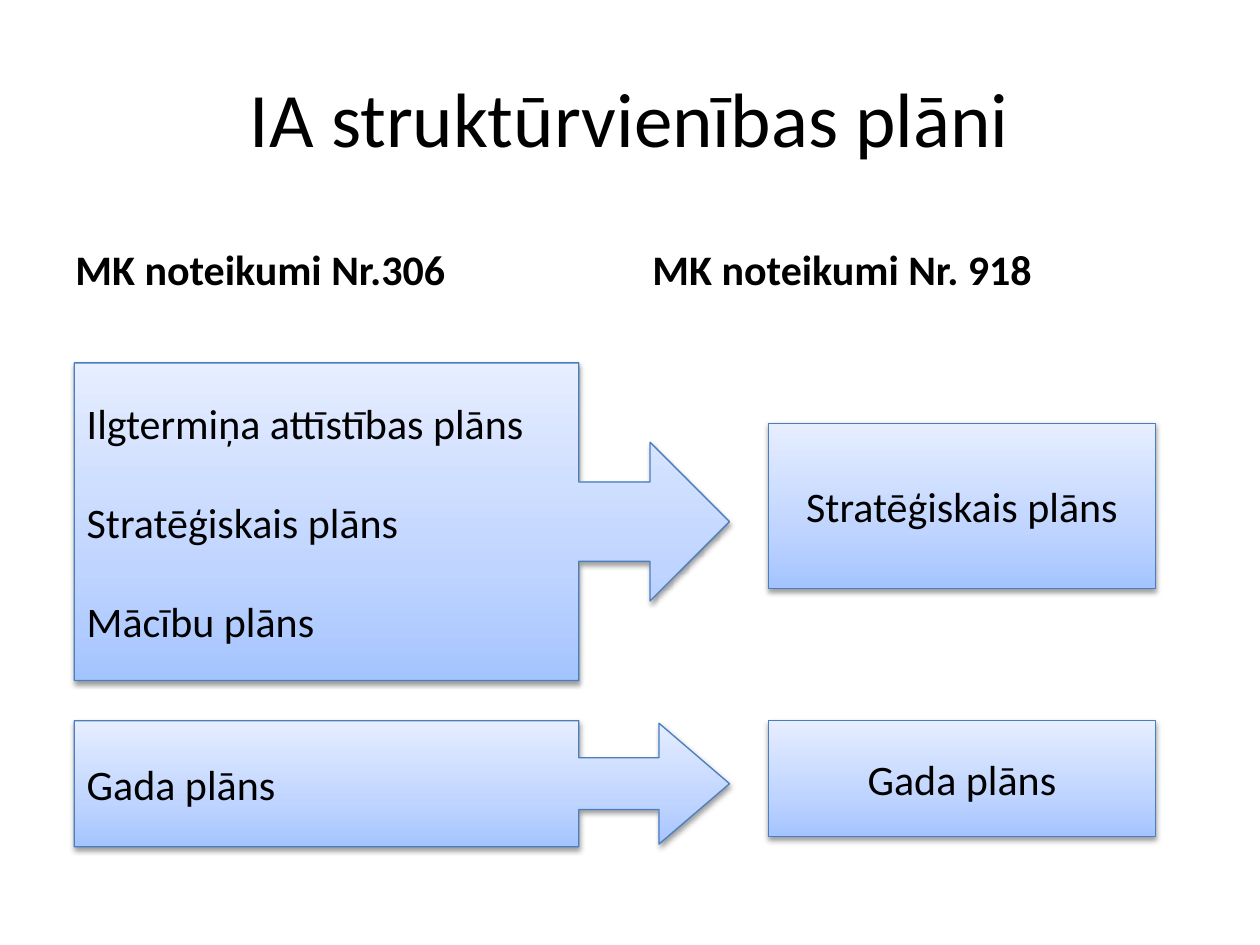
import pptx
import pptx.dml.color
import pptx.enum.shapes
import pptx.enum.text
import pptx.oxml
import pptx.oxml.ns
import pptx.util
from pptx.util import Inches

RGBColor = pptx.dml.color.RGBColor
Shape = pptx.enum.shapes.MSO_SHAPE
Anchor = pptx.enum.text.MSO_ANCHOR
Align = pptx.enum.text.PP_ALIGN

BLACK = RGBColor(0x00, 0x00, 0x00)
OUTLINE = RGBColor(0x4B, 0x7E, 0xBC)
# Gradient stops from the bottom edge to the top, by percent
GRADIENT = {
    0: RGBColor(0xA4, 0xC4, 0xFF),
    35: RGBColor(0xBF, 0xD4, 0xFF),
    100: RGBColor(0xE6, 0xEE, 0xFF),
}

LEFT_X, LEFT_WIDTH = 0.59, 5.2
RIGHT_X, RIGHT_WIDTH = 6.1, 3.07
YEAR_TOP = 5.72


def write_text(shape, lines, anchor, align=Align.LEFT, gap=0, **font_format):
    """Write one paragraph per line, with a gap between paragraphs."""
    frame = shape.text_frame
    frame.word_wrap = True
    frame.vertical_anchor = anchor
    font_values = {"name": "Calibri", "size": pptx.util.Pt(24), **font_format}
    for index, line in enumerate(lines):
        para = frame.add_paragraph() if index else frame.paragraphs[0]
        para.alignment = align
        para.space_before = pptx.util.Pt(gap if index else 0)
        span = para.add_run()
        span.text = line
        for name, value in font_values.items():
            setattr(span.font, name, value)
        span.font.color.rgb = BLACK


def add_label(page, place, text, anchor, **text_format):
    box = page.shapes.add_textbox(*map(Inches, place))
    write_text(box, [text], anchor, **text_format)


def style_panel(shape):
    """Give a panel its gradient, outline and soft shadow."""
    namespace = pptx.oxml.ns.nsdecls("a")
    stops = "".join(
        f'<a:gs pos="{percent * 1000}"><a:srgbClr val="{color}"/></a:gs>'
        for percent, color in GRADIENT.items()
    )
    gradient = pptx.oxml.parse_xml(
        f'<a:gradFill {namespace} rotWithShape="1"><a:gsLst>{stops}</a:gsLst>'
        '<a:lin ang="16200000" scaled="0"/></a:gradFill>'
    )
    shape.element.spPr.find(pptx.oxml.ns.qn("a:prstGeom")).addnext(gradient)

    shape.line.color.rgb = OUTLINE
    shape.line.width = pptx.util.Pt(0.75)

    shape.shadow.inherit = False
    effects = shape.element.spPr.find(pptx.oxml.ns.qn("a:effectLst"))
    effects.append(pptx.oxml.parse_xml(
        f'<a:outerShdw {namespace} blurRad="40000" dist="20000" dir="5400000"'
        f' rotWithShape="0"><a:srgbClr val="{BLACK}"><a:alpha val="38000"/>'
        '</a:srgbClr></a:outerShdw>'
    ))


def add_panel(page, kind, place, lines, adjustments=(), **text_format):
    shape = page.shapes.add_shape(kind, *map(Inches, place))
    for index, value in enumerate(adjustments):
        shape.adjustments[index] = value
    style_panel(shape)
    write_text(shape, lines, Anchor.MIDDLE, **text_format)


def add_source_panel(page, top, height, lines, adjustments):
    """Add a left-hand panel whose arrow points to the right column."""
    add_panel(page, Shape.RIGHT_ARROW_CALLOUT,
              (LEFT_X, top, LEFT_WIDTH, height), lines, adjustments, gap=28)


def add_target_panel(page, top, height, text):
    add_panel(page, Shape.RECTANGLE, (RIGHT_X, top, RIGHT_WIDTH, height),
              [text], align=Align.CENTER)


def main():
    deck = pptx.Presentation()
    deck.slide_width, deck.slide_height = Inches(10), Inches(7.5)
    page = deck.slides.add_slide(deck.slide_layouts[6])

    # Title and column headings
    add_label(page, (0.5, 0.3, 9, 1.25), "IA struktūrvienības plāni",
              Anchor.MIDDLE, align=Align.CENTER, size=pptx.util.Pt(44))
    headings = {0.5: "MK noteikumi Nr.306", 5.08: "MK noteikumi Nr. 918"}
    for left, heading in headings.items():
        add_label(page, (left, 1.68, 4.42, 0.7), heading, Anchor.BOTTOM,
                  bold=True)

    # Long-term plans merge into one strategic plan
    add_source_panel(page, 2.88, 2.52,
                     ["Ilgtermiņa attīstības plāns", "Stratēģiskais plāns",
                      "Mācību plāns"], (0.25, 0.25, 0.25, 0.77))
    add_target_panel(page, 3.36, 1.31, "Stratēģiskais plāns")

    # The yearly plan stays
    add_source_panel(page, YEAR_TOP, 1, ["Gada plāns"],
                     (0.41, 0.48, 0.56, 0.77))
    add_target_panel(page, YEAR_TOP, 0.92, "Gada plāns")

    deck.save("out.pptx")


if __name__ == "__main__":
    main()
